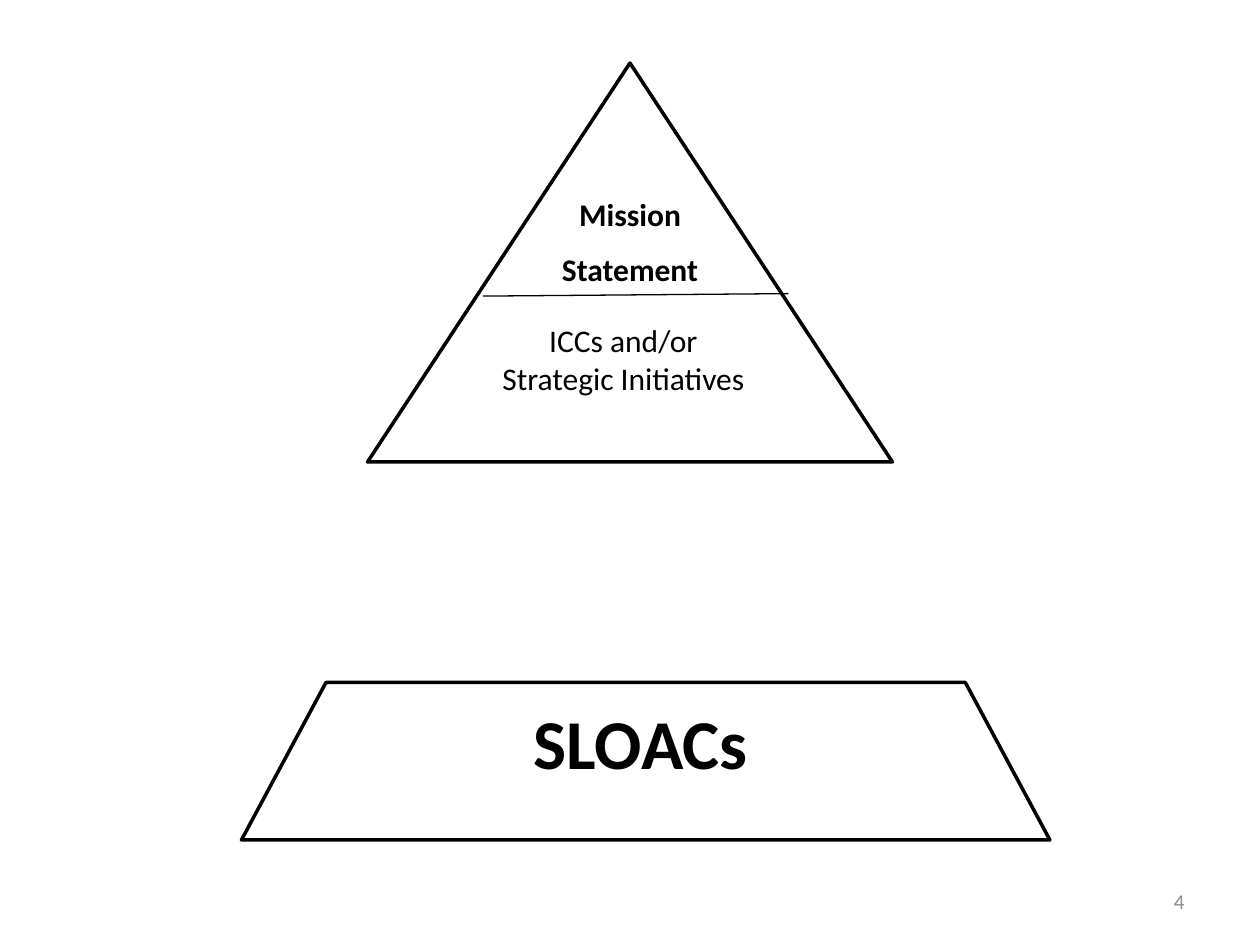
from dataclasses import dataclass
from lxml import etree
from pptx import Presentation
from pptx import util as u
from pptx.dml.color import RGBColor
from pptx.enum import shapes, text
from pptx.oxml.ns import qn


@dataclass(frozen=True)
class Theme:
    font: str = "Calibri"
    ink: RGBColor = RGBColor(0, 0, 0)
    paper: RGBColor = RGBColor(255, 255, 255)
    muted: RGBColor = RGBColor(0x8C, 0x8C, 0x8C)
    heading: float = 40
    body: float = 18
    small: float = 12
    outline: float = 2
    hairline: float = 0.75


T = Theme()
Shape = shapes.MSO_SHAPE
Align = text.PP_ALIGN

LABELS = {
    "base": (["SLOACs"], (186, 396, 360, 78), T.heading, True, 10),
    "mission": (["Mission", "Statement"], (312, 108, 96, 53), T.body, True, 10),
    "initiatives": (["ICCs and/or", "Strategic Initiatives"], (276, 180, 160.5, 42), T.body, False, 0),
}
DIVIDER = (276, 169.2, 450.5, 167.8)
OUTLINES = [
    (Shape.ISOSCELES_TRIANGLE, (210, 36, 300, 228), None),
    (Shape.TRAPEZOID, (138, 390, 462, 90), 0.537),
]
PAGE_NUMBER = ("4", (516, 500.5, 168, 28.75))


def points(values):
    return [u.Pt(v) for v in values]


def write(sp, lines, size, color, align, bold=False, after=0, anchor=text.MSO_ANCHOR.TOP):
    tf = sp.text_frame
    tf.word_wrap = True
    tf.vertical_anchor = anchor
    for i, line in enumerate(lines):
        p = tf.add_paragraph() if i else tf.paragraphs[0]
        p.text = line
        p.alignment = align
        p.space_after = u.Pt(after)
        p.font.name, p.font.size, p.font.bold = T.font, u.Pt(size), bold
        p.font.color.rgb = color


def add_label(s, lines, box, size, bold, after):
    sp = s.shapes.add_shape(Shape.RECTANGLE, *points(box))
    sp.shadow.inherit = False
    sp.fill.solid()
    sp.fill.fore_color.rgb = T.paper
    sp.line.fill.background()
    write(sp, lines, size, T.ink, Align.CENTER, bold, after)


def stroke(sp, width):
    sp.line.color.rgb = T.ink
    sp.line.width = u.Pt(width)


def add_divider(s):
    line = s.shapes.add_connector(shapes.MSO_CONNECTOR.STRAIGHT, *points(DIVIDER))
    stroke(line, T.hairline)
    etree.SubElement(line._element.spPr, qn("a:effectLst"))


def add_outline(s, kind, box, slant):
    sp = s.shapes.add_shape(kind, *points(box))
    sp.shadow.inherit = False
    sp.fill.background()
    stroke(sp, T.outline)
    if slant is not None:
        sp.adjustments[0] = slant


def main():
    prs = Presentation()
    prs.slide_width, prs.slide_height = points((720, 540))
    s = prs.slides.add_slide(prs.slide_layouts[6])
    add_label(s, *LABELS["base"])
    add_label(s, *LABELS["mission"])
    add_divider(s)
    add_label(s, *LABELS["initiatives"])
    for outline in OUTLINES:
        add_outline(s, *outline)
    number, box = PAGE_NUMBER
    write(s.shapes.add_textbox(*points(box)), [number], T.small, T.muted, Align.RIGHT,
          anchor=text.MSO_ANCHOR.MIDDLE)
    prs.save("out.pptx")


if __name__ == "__main__":
    main()
